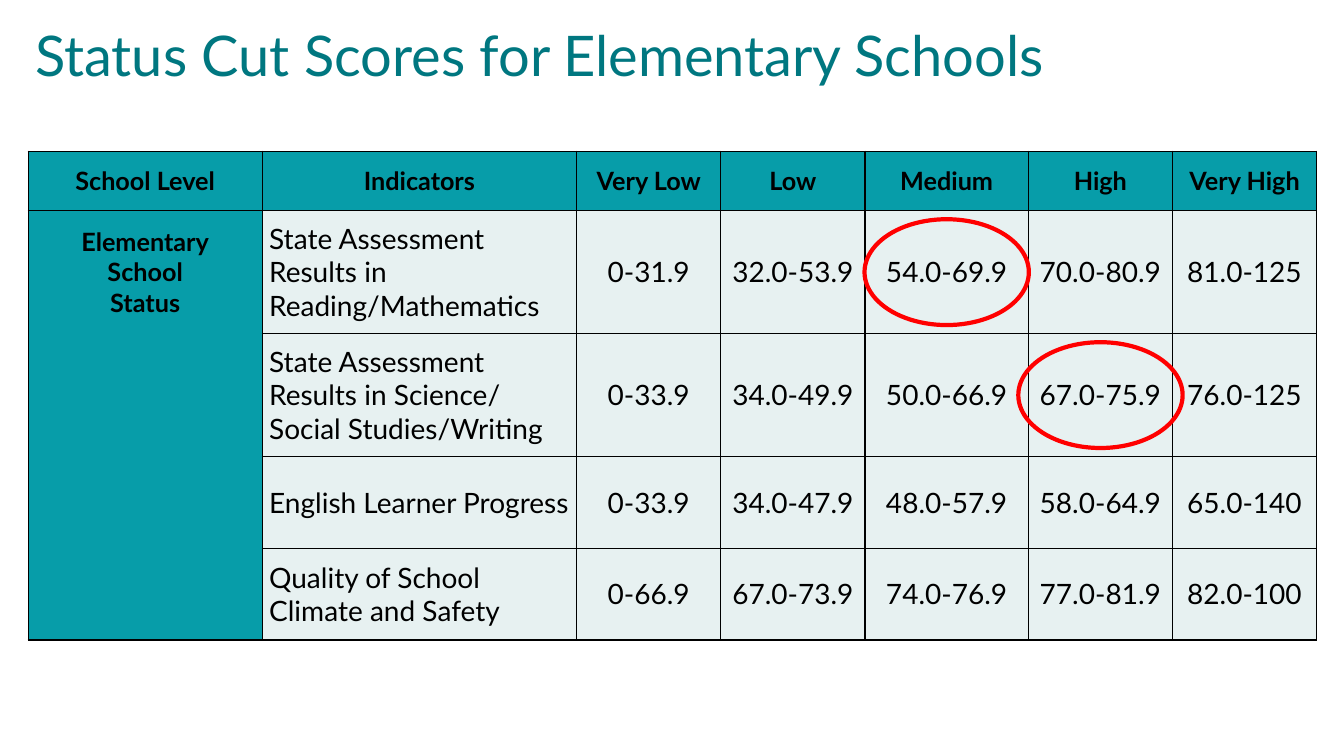
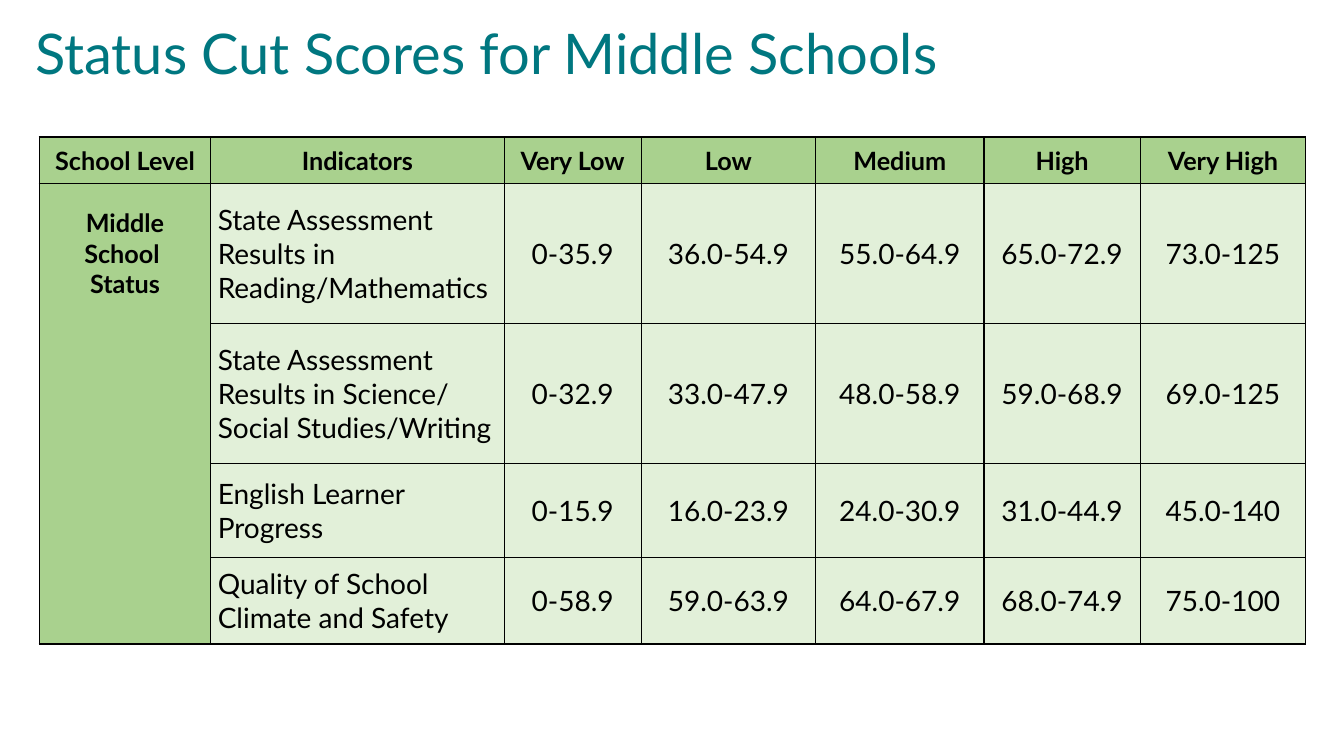
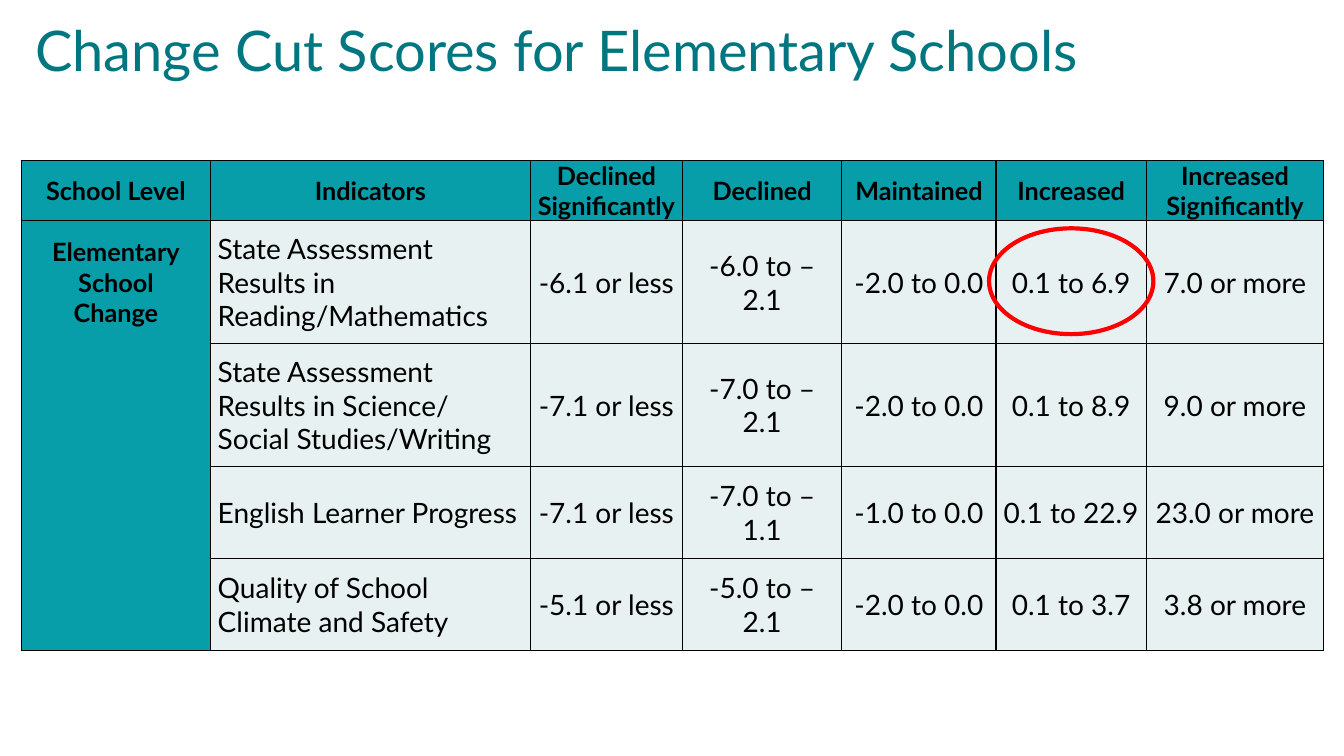
"""Build three slides of cut-score tables for school accountability ratings."""
import dataclasses

import lxml.etree
import pptx
import pptx.dml.color
import pptx.enum.shapes
import pptx.enum.text
import pptx.oxml.ns
import pptx.presentation
import pptx.slide
import pptx.table
import pptx.util

RGBColor = pptx.dml.color.RGBColor
Inches = pptx.util.Inches
Pt = pptx.util.Pt
PP_ALIGN = pptx.enum.text.PP_ALIGN
MIDDLE = pptx.enum.text.MSO_ANCHOR.MIDDLE

FONT = "Lato"
BLACK = RGBColor(0x00, 0x00, 0x00)
TITLE_TEAL = RGBColor(0x00, 0x77, 0x80)
TEAL = RGBColor(0x07, 0x9D, 0xA9)
PALE_TEAL = RGBColor(0xE7, 0xF1, 0xF1)
GREEN = RGBColor(0xA9, 0xD1, 0x8E)
PALE_GREEN = RGBColor(0xE2, 0xF0, 0xD9)
RED = RGBColor(0xFF, 0x00, 0x00)

SLIDE_WIDTH, SLIDE_HEIGHT = 13.33, 7.5
HIGHLIGHT_WIDTH, HIGHLIGHT_HEIGHT = 1.63, 1.05
CELL_MARGIN = 0.07
BORDER_WIDTH = 1
TITLE_ONLY = 5

INDICATORS = (
    "State Assessment Results in Reading/Mathematics",
    "State Assessment Results in Science/\nSocial Studies/Writing",
    "English Learner Progress",
    "Quality of School Climate and Safety",
)
STATUS_RATINGS = ("Very Low", "Low", "Medium", "High", "Very High")
CHANGE_RATINGS = (
    "Declined Significantly",
    "Declined",
    "Maintained",
    "Increased",
    "Increased Significantly",
)


@dataclasses.dataclass(frozen=True)
class Palette:
    """Fills of the heading cells and of the score cells."""

    heading: RGBColor
    body: RGBColor


@dataclasses.dataclass(frozen=True)
class CutScores:
    """One slide: its title, table grid, scores and circled (row, column) cells."""

    title: str
    title_size: tuple[float, float]
    palette: Palette
    origin: tuple[float, float]
    columns: tuple[float, ...]
    rows: tuple[float, ...]
    level: tuple[str, ...]
    ratings: tuple[str, ...]
    scores: tuple[tuple[str, ...], ...]
    circled: tuple[tuple[int, int], ...] = ()
    title_top: float = 0


ELEMENTARY = Palette(TEAL, PALE_TEAL)
MIDDLE_SCHOOL = Palette(GREEN, PALE_GREEN)

CUT_SCORES = (
    CutScores(
        title="Status Cut Scores for Elementary Schools",
        title_size=(13.05, 1.15),
        palette=ELEMENTARY,
        origin=(0.28, 1.5),
        columns=(2.32, 3.12, 1.43, 1.43, 1.62, 1.43, 1.43),
        rows=(0.59, 1.22, 1.22, 0.91, 0.91),
        level=("Elementary", "School", "Status"),
        ratings=STATUS_RATINGS,
        scores=(
            ("0-31.9", "32.0-53.9", "54.0-69.9", "70.0-80.9", "81.0-125"),
            ("0-33.9", "34.0-49.9", "50.0-66.9", "67.0-75.9", "76.0-125"),
            ("0-33.9", "34.0-47.9", "48.0-57.9", "58.0-64.9", "65.0-140"),
            ("0-66.9", "67.0-73.9", "74.0-76.9", "77.0-81.9", "82.0-100"),
        ),
        circled=((1, 4), (2, 5)),
    ),
    CutScores(
        title="Status Cut Scores for Middle Schools",
        title_size=(12.55, 1.09),
        title_top=0.01,
        palette=MIDDLE_SCHOOL,
        origin=(0.39, 1.36),
        columns=(1.7, 2.91, 1.36, 1.73, 1.67, 1.55, 1.64),
        rows=(0.46, 1.39, 1.39, 0.93, 0.86),
        level=("Middle School ", "Status"),
        ratings=STATUS_RATINGS,
        scores=(
            ("0-35.9", "36.0-54.9", "55.0-64.9", "65.0-72.9", "73.0-125"),
            ("0-32.9", "33.0-47.9", "48.0-58.9", "59.0-68.9", "69.0-125"),
            ("0-15.9", "16.0-23.9", "24.0-30.9", "31.0-44.9", "45.0-140"),
            ("0-58.9", "59.0-63.9", "64.0-67.9", "68.0-74.9", "75.0-100"),
        ),
    ),
    CutScores(
        title="Change Cut Scores for Elementary Schools",
        title_size=(13.05, 1.05),
        palette=ELEMENTARY,
        origin=(0.21, 1.59),
        columns=(1.88, 3.17, 1.51, 1.58, 1.53, 1.49, 1.76),
        rows=(0.59, 1.22, 1.22, 0.91, 0.91),
        level=("Elementary", "School", "Change"),
        ratings=CHANGE_RATINGS,
        scores=(
            ("-6.1 or less", "-6.0 to –2.1", "-2.0 to 0.0", "0.1 to 6.9", "7.0 or more"),
            ("-7.1 or less", "-7.0 to –2.1", "-2.0 to 0.0", "0.1 to 8.9", "9.0 or more"),
            ("-7.1 or less", "-7.0 to –1.1", "-1.0 to 0.0", "0.1 to 22.9", "23.0 or more "),
            ("-5.1 or less", "-5.0 to –2.1", "-2.0 to 0.0", "0.1 to 3.7", "3.8 or more"),
        ),
        circled=((1, 5),),
    ),
)


def add_title(slide: pptx.slide.Slide, page: CutScores) -> None:
    """Place and format the title placeholder."""
    title = slide.shapes.title
    title.left, title.top = 0, Inches(page.title_top)
    title.width, title.height = (Inches(length) for length in page.title_size)
    frame = title.text_frame
    frame.auto_size = pptx.enum.text.MSO_AUTO_SIZE.NONE
    frame.word_wrap = True
    frame.vertical_anchor = MIDDLE
    frame.margin_left = Inches(0.35)
    heading = frame.paragraphs[0]
    heading.text = page.title
    heading.alignment = PP_ALIGN.LEFT
    heading.line_spacing = 0.9
    heading.font.name, heading.font.size = FONT, Pt(40)
    heading.font.color.rgb = TITLE_TEAL


def set_borders(cell: pptx.table._Cell, hidden: str) -> None:
    """Rule the four sides of a cell, leaving out the hidden ones."""
    qn = pptx.oxml.ns.qn
    properties = cell._tc.get_or_add_tcPr()
    for side in "LRTB":
        rule = lxml.etree.SubElement(
            properties, qn(f"a:ln{side}"), w=str(Pt(BORDER_WIDTH))
        )
        if side in hidden:
            lxml.etree.SubElement(rule, qn("a:noFill"))
        else:
            ink = lxml.etree.SubElement(rule, qn("a:solidFill"))
            lxml.etree.SubElement(ink, qn("a:srgbClr"), val=str(BLACK))


def fill_cell(
    cell: pptx.table._Cell,
    lines: tuple[str, ...],
    fill: RGBColor,
    heading: bool,
    alignment: PP_ALIGN,
    hidden: str,
) -> None:
    """Write one paragraph per line and format the cell."""
    set_borders(cell, hidden)
    cell.fill.solid()
    cell.fill.fore_color.rgb = fill
    cell.vertical_anchor = MIDDLE
    cell.margin_left = cell.margin_right = Inches(CELL_MARGIN)
    cell.margin_top = cell.margin_bottom = 0
    frame = cell.text_frame
    for number, line in enumerate(lines):
        paragraph = frame.add_paragraph() if number else frame.paragraphs[0]
        paragraph.text = line
        paragraph.alignment = alignment
        paragraph.font.name = FONT
        paragraph.font.size = Pt(18 if heading else 20)
        paragraph.font.bold = heading
        paragraph.font.color.rgb = BLACK


def add_score_table(slide: pptx.slide.Slide, page: CutScores) -> None:
    """Draw the table of indicators and cut scores."""
    left, top = page.origin
    table = slide.shapes.add_table(
        len(page.rows),
        len(page.columns),
        Inches(left),
        Inches(top),
        Inches(sum(page.columns)),
        Inches(sum(page.rows)),
    ).table
    table.first_row = table.horz_banding = False
    for column, width in zip(table.columns, page.columns):
        column.width = Inches(width)
    for row, height in zip(table.rows, page.rows):
        row.height = Inches(height)

    grid = [("School Level", "Indicators", *page.ratings)]
    grid += [("", name, *scores) for name, scores in zip(INDICATORS, page.scores)]
    last_row = len(grid) - 1
    for row, texts in enumerate(grid):
        for column, text in enumerate(texts):
            in_level = column == 0 and row > 0
            heading = row == 0 or column == 0
            hidden = ""
            if in_level:
                hidden = ("T" if row > 1 else "") + ("B" if row < last_row else "")
            fill_cell(
                table.cell(row, column),
                page.level if in_level and row == 1 else (text,),
                page.palette.heading if heading else page.palette.body,
                heading,
                PP_ALIGN.LEFT if column == 1 and row else PP_ALIGN.CENTER,
                hidden,
            )


def circle_score(slide: pptx.slide.Slide, page: CutScores, row: int, column: int) -> None:
    """Centre a red ellipse on one score."""
    left, top = page.origin
    center_x = left + sum(page.columns[:column]) + page.columns[column] / 2
    center_y = top + sum(page.rows[:row]) + page.rows[row] / 2
    highlight = slide.shapes.add_shape(
        pptx.enum.shapes.MSO_SHAPE.OVAL,
        Inches(center_x - HIGHLIGHT_WIDTH / 2),
        Inches(center_y - HIGHLIGHT_HEIGHT / 2),
        Inches(HIGHLIGHT_WIDTH),
        Inches(HIGHLIGHT_HEIGHT),
    )
    highlight.shadow.inherit = False
    highlight.fill.background()
    highlight.line.color.rgb = RED
    highlight.line.width = Pt(3)


def add_page(deck: pptx.presentation.Presentation, page: CutScores) -> None:
    """Add one slide with its title, table and circled scores."""
    slide = deck.slides.add_slide(deck.slide_layouts[TITLE_ONLY])
    add_title(slide, page)
    add_score_table(slide, page)
    for row, column in page.circled:
        circle_score(slide, page, row, column)


def main() -> None:
    """Build and save the presentation."""
    deck = pptx.Presentation()
    deck.slide_width, deck.slide_height = Inches(SLIDE_WIDTH), Inches(SLIDE_HEIGHT)
    for page in CUT_SCORES:
        add_page(deck, page)
    deck.save("out.pptx")


if __name__ == "__main__":
    main()
